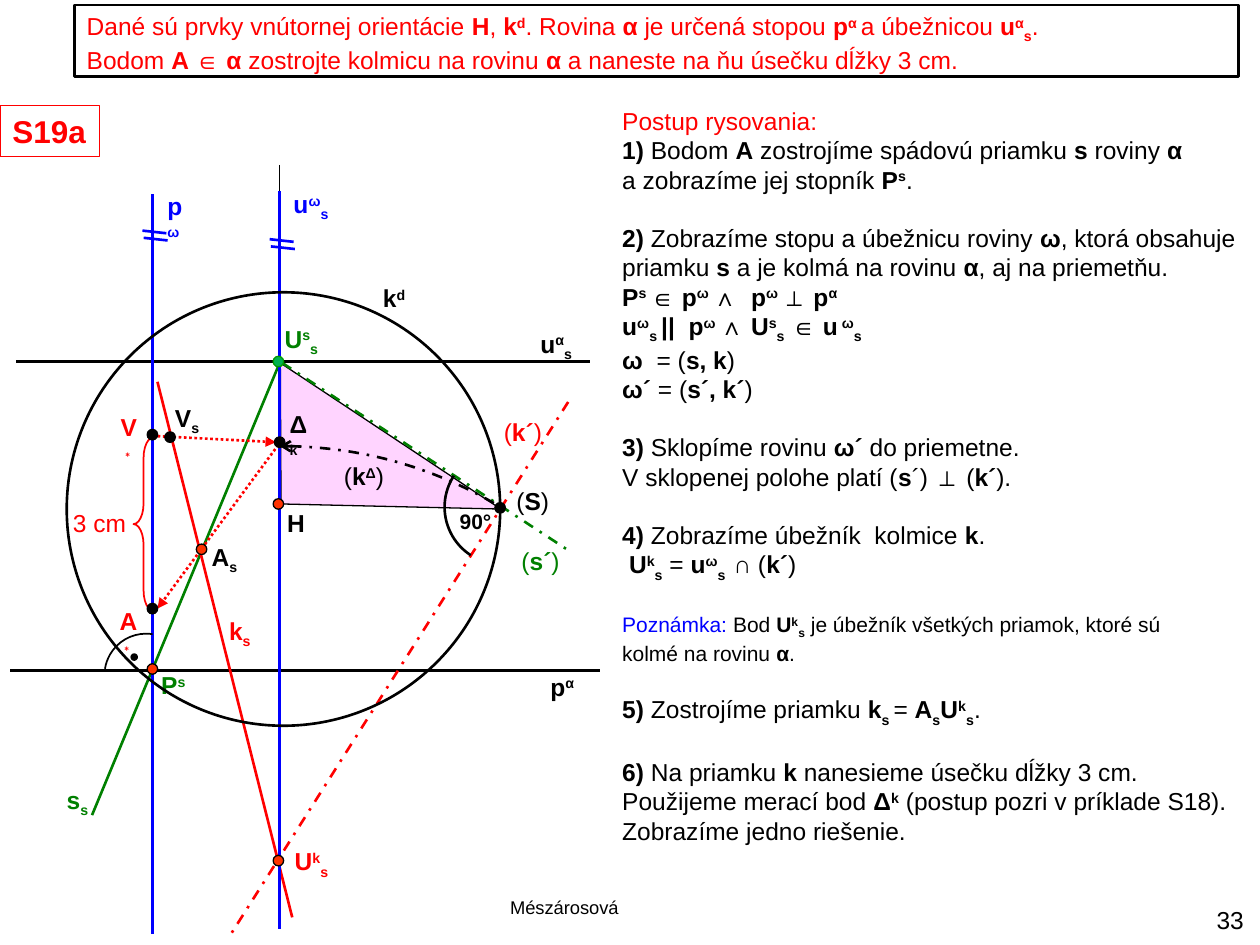
from dataclasses import dataclass
from typing import Optional

from lxml import etree
from pptx import Presentation
from pptx.dml.color import RGBColor
from pptx.enum.dml import MSO_LINE
from pptx.enum.shapes import MSO_CONNECTOR, MSO_SHAPE
from pptx.enum.text import MSO_ANCHOR, MSO_AUTO_SIZE, PP_ALIGN
from pptx.oxml.ns import qn
from pptx.util import Pt

STRAIGHT = MSO_CONNECTOR.STRAIGHT
OVAL, ARC, BRACE = MSO_SHAPE.OVAL, MSO_SHAPE.ARC, MSO_SHAPE.LEFT_BRACE
DASH_DOT, DOTTED = MSO_LINE.DASH_DOT, MSO_LINE.ROUND_DOT
GROW, FIXED = MSO_AUTO_SIZE.SHAPE_TO_FIT_TEXT, MSO_AUTO_SIZE.NONE
TOP, BOTTOM = MSO_ANCHOR.TOP, MSO_ANCHOR.BOTTOM
RIGHT = PP_ALIGN.RIGHT


@dataclass(frozen=True)
class Theme:
    font: str = "Arial"
    black: str = "000000"
    white: str = "FFFFFF"
    red: str = "FF0000"
    blue: str = "0000FF"
    green: str = "008000"
    magenta: str = "FF00FF"
    given: str = "FF3300"
    vanishing: str = "00B050"
    vanishing_edge: str = "009900"
    title: float = 18
    body: float = 14
    note: float = 12
    credit: float = 10.5


T = Theme()


@dataclass(frozen=True)
class Para:
    markup: str
    color: str = T.black
    size: float = T.body
    gap: float = 0
    lead: str = ""


@dataclass(frozen=True)
class Label:
    markup: str
    x: float
    y: float
    w: float
    color: str = T.black
    h: float = 24.2
    size: float = T.body
    stacked: bool = False


@dataclass(frozen=True)
class Segment:
    x1: float
    y1: float
    x2: float
    y2: float
    color: str = T.black
    width: float = 1.5
    dash: Optional[MSO_LINE] = None
    arrow: bool = False


@dataclass(frozen=True)
class Dot:
    x: float
    y: float
    fill: str = T.black
    edge: str = T.black
    size: float = 6


@dataclass(frozen=True)
class Arc:
    x: float
    y: float
    radius: float
    start: float
    end: float
    width: float = 1.5
    dash: Optional[MSO_LINE] = None
    arrow: bool = False


def rgb(color: str) -> RGBColor:
    return RGBColor.from_string(color)


def paint(shape, color: str, alpha: int = 100) -> None:
    shape.fill.solid()
    shape.fill.fore_color.rgb = rgb(color)
    if alpha < 100:
        swatch = shape.fill._xPr.find(f".//{qn('a:srgbClr')}")
        etree.SubElement(swatch, qn("a:alpha")).set("val", str(alpha * 1000))


def stroke(shape, color: str, width: float, dash=None, end: str = "", head: str = "") -> None:
    shape.line.color.rgb = rgb(color)
    shape.line.width = Pt(width)
    if dash is not None:
        shape.line.dash_style = dash
    if end:
        etree.SubElement(shape.line._get_or_add_ln(), qn(f"a:{end}")).set("type", head)


def add_piece(paragraph, text: str, size: float, color: str, bold: bool, base: int) -> None:
    run = paragraph.add_run()
    run.text = text
    run.font.name, run.font.size, run.font.bold = T.font, Pt(size), bold
    run.font.color.rgb = rgb(color)
    if base:
        run._r.get_or_add_rPr().set("baseline", str(base * 1000))


def write(paragraph, markup: str, size: float, color: str) -> None:
    """* toggles bold, ^ toggles superscript, _ toggles subscript."""
    bold, base, text = False, 0, ""
    for char in markup + "*":
        if char not in "*^_":
            text += char
            continue
        if text:
            add_piece(paragraph, text, size, color, bold, base)
        text = ""
        if char == "*":
            bold = not bold
        else:
            level = 30 if char == "^" else -25
            base = 0 if base == level else level


def add_text(slide, x: float, y: float, w: float, h: float, paras: list[Para], wrap: bool = True):
    box = slide.shapes.add_textbox(Pt(x), Pt(y), Pt(w), Pt(h))
    frame = box.text_frame
    frame.word_wrap, frame.auto_size, frame.vertical_anchor = wrap, GROW, TOP
    for i, para in enumerate(paras):
        paragraph = frame.add_paragraph() if i else frame.paragraphs[0]
        paragraph.space_before = Pt(para.gap)
        if para.lead:
            write(paragraph, para.lead, para.size, T.blue)
        write(paragraph, para.markup, para.size, para.color)
    return box


def add_label(slide, label: Label):
    box = add_text(slide, label.x, label.y, label.w, label.h,
                   [Para(label.markup, label.color, label.size)], label.stacked)
    if label.stacked:
        box.text_frame.auto_size = FIXED
        box.text_frame.margin_right = Pt(11)
    return box


def add_segment(slide, seg: Segment) -> None:
    line = slide.shapes.add_connector(STRAIGHT, Pt(seg.x1), Pt(seg.y1), Pt(seg.x2), Pt(seg.y2))
    stroke(line, seg.color, seg.width, seg.dash, "tailEnd" if seg.arrow else "", "triangle")
    etree.SubElement(line._element.spPr, qn("a:effectLst"))


def add_round(slide, kind, x: float, y: float, size: float):
    shape = slide.shapes.add_shape(kind, Pt(x - size / 2), Pt(y - size / 2), Pt(size), Pt(size))
    shape.shadow.inherit = False
    shape.fill.background()
    return shape


def add_dot(slide, dot: Dot) -> None:
    shape = add_round(slide, OVAL, dot.x, dot.y, dot.size)
    paint(shape, dot.fill)
    stroke(shape, dot.edge, 0.75)


def add_arc(slide, arc: Arc) -> None:
    shape = add_round(slide, ARC, arc.x, arc.y, arc.radius * 2)
    shape.adjustments[0], shape.adjustments[1] = arc.start * 0.6, arc.end * 0.6
    stroke(shape, T.black, arc.width, arc.dash, "headEnd" if arc.arrow else "", "arrow")


TASK = [
    Para("Dané sú prvky vnútornej orientácie *H*, *k^d^*. Rovina *α *je určená stopou "
         "*p^α ^*a úbežnicou *u^α^_s_*.", T.red),
    Para("Bodom *A ∈ α *zostrojte kolmicu na rovinu *α *a naneste na ňu úsečku dĺžky 3 cm.", T.red),
]
STEPS = [
    Para("Postup rysovania:", T.red),
    Para("*1)* Bodom *A* zostrojíme spádovú priamku *s* roviny *α* a\u00a0zobrazíme jej stopník *P^s^*."),
    Para("*2) *Zobrazíme stopu a úbežnicu roviny *ω*, ktorá obsahuje", gap=16.5),
    Para("priamku *s* a je kolmá na rovinu *α*, aj na priemetňu."),
    Para("*P^s ^∈ p^ω ^*∧ * p^ω ^⊥ p^α^*"),
    Para("*u^ω^_s _||  p^ω ^*∧ *U^s^_s_ ∈ u^ ω^_s_*"),
    Para("*ω  *= (*s, k*)"),
    Para("*ω´ *= (*s´, k´*)"),
    Para("*3) *Sklopíme rovinu *ω´ *do priemetne.", gap=16.5),
    Para("V sklopenej polohe platí (*s*´) *⊥ *(*k´*)."),
    Para("*4) *Zobrazíme úbežník  kolmice *k*.", gap=16.5),
    Para("* U^k^_s_* = *u^ω^_s  _*∩ (*k´*)"),
    Para("Bod *U^k^_s_* je úbežník všetkých priamok, ktoré sú", size=T.note, gap=16.5, lead="Poznámka: "),
    Para("kolmé na rovinu *α*.", size=T.note),
    Para("*5) *Zostrojíme priamku *k_s _*= *A_s_U^k^_s_*.", gap=16.5),
    Para("*6) *Na priamku *k* nanesieme úsečku dĺžky 3 cm.", gap=16.5),
    Para("Použijeme merací bod *Δ^k^* (postup pozri v príklade S18)."),
    Para("Zobrazíme jedno riešenie."),
]
LABELS = [
    Label("*u^ω^_s_*", 160.6, 104.4, 34.6, T.blue),
    Label("*p^ω^*", 88.6, 105.8, 29.5, T.blue, stacked=True),
    Label("*p^α^*", 307.4, 380.2, 28.8), Label("*u^α^_s_*", 301.7, 184.3, 34.6),
    Label("*H*", 157, 286.6, 24.5), Label("*k^d^*", 211.7, 158.4, 28.1),
    Label("*A_s_*", 113.8, 306, 30.2), Label("(*S*)", 288, 274.3, 33.1),
    Label("(*s´*)", 290.9, 308.2, 36.7, T.green), Label("(*k´*)", 280.8, 234.7, 36.7, T.red),
    Label("*90°*", 255.6, 287.3, 32.4, h=21.6, size=T.note),
    Label("*s_s_*", 31, 445, 27.4, T.green), Label("*U^s^_s_*", 155.5, 181.4, 35.3, T.green),
    Label("*Δ^k^*", 158.4, 230.4, 28.8, stacked=True),
    Label("*A^∗^*", 61.2, 342.7, 29.5, T.red, stacked=True),
    Label("*V^∗^*", 61.9, 231.8, 28.8, T.red, stacked=True),
    Label("3 cm", 34.6, 286.6, 46.8, T.red), Label("*k_s_*", 123.8, 348.5, 27.4, T.red),
    Label("*V_s_*", 92.9, 226.8, 29.5), Label("*P^s^*", 85, 379.4, 29.5, T.green),
    Label("*U^k^_s_*", 161.3, 480.2, 35.3, T.red), Label("(*k^Δ^*)", 189.4, 259.9, 37.4),
    Label("Mészárosová", 284.4, 508.3, 77.8, h=20.2, size=T.credit),
]
SEGMENTS = [
    Segment(159.8, 94.3, 159.8, 464.4, width=0.75),
    Segment(5.8, 383, 342.7, 383), Segment(9.4, 206.6, 337, 206.6),
    Segment(52.6, 465.8, 159.8, 207.4, T.green),
    Segment(161.3, 207.4, 326.2, 315.4, T.green, dash=DASH_DOT),
    Segment(324.7, 229.7, 130.3, 536.4, T.red, dash=DASH_DOT),
    Segment(167, 524.2, 90, 218.2, T.red),
    Segment(159.8, 109.4, 159.8, 530.6, T.blue), Segment(87.1, 110.9, 87.1, 533.5, T.blue),
    Segment(87.1, 249.1, 157.7, 252.7, T.red, dash=DOTTED, arrow=True),
    Segment(159.1, 254.2, 90, 347.8, T.red, dash=DOTTED, arrow=True),
] + [
    Segment(x + 0.7 * i, y + 4.1 * i, x + 0.7 * i + 13.7, y + 4.1 * i + 1.5, T.blue)
    for x, y in ((81.4, 131.8), (154.1, 136.7)) for i in range(2)
]
ARCS = [
    Arc(286.9, 289.8, 32.8, 123, 213), Arc(83.5, 385.9, 23.8, 189, 279, width=1),
    Arc(159.8, 501.1, 246.2, 270, 301.36, dash=DASH_DOT, arrow=True),
]
DOTS = [
    Dot(159.1, 288, T.given), Dot(115.2, 313.9, T.given), Dot(87.1, 382.3, T.given),
    Dot(159.1, 491.8, T.given), Dot(159.1, 206.6, T.vanishing, T.vanishing_edge),
    Dot(159.8, 252.7), Dot(87.1, 347.8), Dot(97.2, 249.8), Dot(87.1, 248.4),
    Dot(285.8, 290.2), Dot(76.7, 375.5, size=3.6),
]


def main() -> None:
    prs = Presentation()
    prs.slide_width, prs.slide_height = Pt(720), Pt(540)
    slide = prs.slides.add_slide(prs.slide_layouts[6])

    outline = slide.shapes.build_freeform(Pt(160.2), Pt(207.4))
    outline.add_line_segments([(Pt(160.6), Pt(288)), (Pt(286.2), Pt(290.9))], close=True)
    triangle = outline.convert_to_shape()
    triangle.shadow.inherit = False
    paint(triangle, T.magenta, 17)
    stroke(triangle, T.black, 0.75)

    for label in LABELS:
        add_label(slide, label)
    for segment in SEGMENTS:
        add_segment(slide, segment)

    distance_circle = add_round(slide, OVAL, 162, 290.9, 247.7)
    stroke(distance_circle, T.black, 1.5)
    length_brace = slide.shapes.add_shape(BRACE, Pt(76.3), Pt(249.8), Pt(11.5), Pt(99.4))
    length_brace.shadow.inherit = False
    length_brace.fill.background()
    length_brace.adjustments[0] = 1.03
    stroke(length_brace, T.red, 1)

    for arc in ARCS:
        add_arc(slide, arc)
    for dot in DOTS:
        add_dot(slide, dot)

    task = add_text(slide, 42.5, 2.9, 665.3, 41, TASK)
    paint(task, T.white, 12)
    stroke(task, T.black, 1.5)
    code = add_label(slide, Label("*S19a*", 0, 60.5, 56.9, T.red, 28.8, T.title))
    stroke(code, T.red, 0.75)
    add_text(slide, 348.5, 56.9, 371.5, 426.2, STEPS)
    number = add_label(slide, Label("33", 686.2, 513.4, 31.7))
    number.text_frame.vertical_anchor = BOTTOM
    number.text_frame.paragraphs[0].alignment = RIGHT

    prs.save("out.pptx")


if __name__ == "__main__":
    main()
